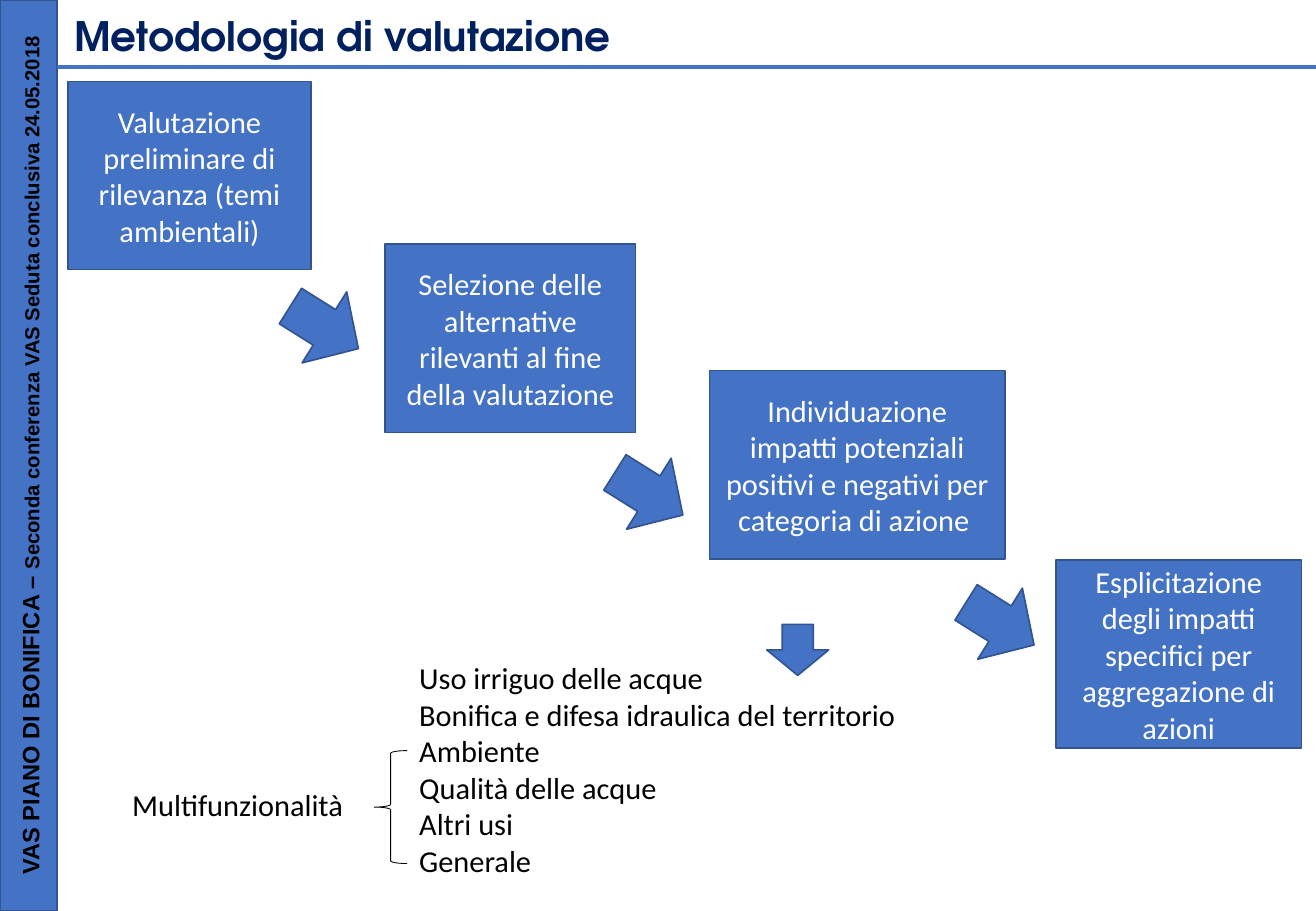
from dataclasses import dataclass

from lxml import etree
from pptx import Presentation
from pptx.dml.color import RGBColor
from pptx.enum.shapes import MSO_CONNECTOR, MSO_SHAPE
from pptx.enum.text import MSO_ANCHOR, MSO_AUTO_SIZE, PP_ALIGN
from pptx.oxml.ns import qn
from pptx.util import Inches, Pt

TITLE = "Metodologia di valutazione"
SIDEBAR = [("VAS PIANO DI BONIFICA – ", 14),
           ("Seconda conferenza VAS Seduta conclusiva 24.05.2018", 12)]
# text, left, top, width
STEPS = [
    ("Valutazione preliminare di rilevanza (temi ambientali)", 0.56, 0.67, 2),
    ("Selezione delle alternative rilevanti al fine della valutazione", 3.17, 2.01, 2.06),
    ("Individuazione impatti potenziali positivi e negativi per categoria di azione ",
     5.84, 3.05, 2.43),
    ("Esplicitazione degli impatti specifici per aggregazione di azioni", 8.69, 4.61, 2.02),
]
STEP_HEIGHT = 1.55
STEP_ARROWS = [(2.34, 2.35), (5.01, 3.72), (7.9, 4.79)]
CATEGORIES = [
    "Uso irriguo delle acque",
    "Bonifica e difesa idraulica del territorio",
    "Ambiente",
    "Qualità delle acque",
    "Altri usi",
    "Generale",
]
GROUP_LABEL = "Multifunzionalità"

WIDTH, HEIGHT = 10.83, 7.5
SIDEBAR_WIDTH = 0.47
RULE_TOP = 0.55


@dataclass(frozen=True)
class Theme:
    blue = RGBColor(0x44, 0x72, 0xC4)
    outline = RGBColor(0x32, 0x54, 0x91)
    navy = RGBColor(0x00, 0x20, 0x60)
    black = RGBColor(0, 0, 0)
    white = RGBColor(255, 255, 255)
    title_font, body_font, sidebar_font = "TeX Gyre Adventor", "Calibri", "Arial"
    title_size, body_size = 24, 18


THEME = Theme()


def inches(*lengths):
    return [Inches(length) for length in lengths]


def style(paragraph, font_name, color, size=None, bold=False, align=PP_ALIGN.LEFT):
    paragraph.alignment = align
    font = paragraph.font
    font.name, font.bold = font_name, bold
    font.color.rgb = color
    if size:
        font.size = Pt(size)


def add_block(slide, kind, box, rotation=0):
    block = slide.shapes.add_shape(kind, *inches(*box))
    block.shadow.inherit = False
    block.rotation = rotation
    block.fill.solid()
    block.fill.fore_color.rgb = THEME.blue
    block.line.color.rgb = THEME.outline
    block.line.width = Pt(1)
    return block


def place(placeholder, box):
    placeholder.left, placeholder.top, placeholder.width, placeholder.height = inches(*box)
    frame = placeholder.text_frame
    frame.auto_size = MSO_AUTO_SIZE.NONE
    frame.vertical_anchor = MSO_ANCHOR.TOP
    frame.word_wrap = True
    return frame


def add_text(slide, box):
    textbox = slide.shapes.add_textbox(*inches(*box))
    textbox.text_frame.word_wrap = True
    return textbox


def remove_bullet(paragraph):
    properties = paragraph._p.get_or_add_pPr()
    properties.set("marL", "0")
    properties.set("indent", "0")
    etree.SubElement(properties, qn("a:buNone"))


def add_frame(slide):
    """Draw the title, the rule below it and the vertical sidebar."""
    title = place(slide.shapes.title, (0.51, 0.04, 10.28, 0.5))
    title.text = TITLE
    style(title.paragraphs[0], THEME.title_font, THEME.navy, THEME.title_size, bold=True)

    add_block(slide, MSO_SHAPE.RECTANGLE, (0, 0, SIDEBAR_WIDTH, HEIGHT))
    rule = slide.shapes.add_connector(
        MSO_CONNECTOR.STRAIGHT, *inches(SIDEBAR_WIDTH, RULE_TOP, WIDTH, RULE_TOP))
    rule.line.color.rgb = THEME.blue
    rule.line.width = Pt(2.25)
    etree.SubElement(rule._element.spPr, qn("a:effectLst"))

    sidebar = add_text(slide, (-3.5, 3.58, HEIGHT, 0.34))
    sidebar.rotation = 270
    heading = sidebar.text_frame.paragraphs[0]
    style(heading, THEME.sidebar_font, THEME.black, bold=True, align=PP_ALIGN.CENTER)
    for text, size in SIDEBAR:
        run = heading.add_run()
        run.text = text
        run.font.size = Pt(size)


def add_steps(slide):
    for text, left, top, width in STEPS:
        step = add_block(slide, MSO_SHAPE.RECTANGLE, (left, top, width, STEP_HEIGHT))
        frame = step.text_frame
        frame.word_wrap = True
        frame.vertical_anchor = MSO_ANCHOR.MIDDLE
        frame.text = text
        style(frame.paragraphs[0], THEME.body_font, THEME.white, THEME.body_size,
              align=PP_ALIGN.CENTER)
    for left, top in STEP_ARROWS:
        add_block(slide, MSO_SHAPE.RIGHT_ARROW, (left, top, 0.66, 0.69), rotation=32.1)


def add_categories(slide):
    categories = place(slide.placeholders[1], (3.35, 5.38, 5.34, 1.92))
    categories.text = "\n".join(CATEGORIES)
    for category in categories.paragraphs:
        remove_bullet(category)
        category.space_before = Pt(0)
        style(category, THEME.body_font, THEME.black, THEME.body_size)

    add_block(slide, MSO_SHAPE.DOWN_ARROW, (6.31, 5.14, 0.51, 0.42))
    brace = add_block(slide, MSO_SHAPE.LEFT_BRACE, (3.08, 6.18, 0.27, 0.93))
    brace.fill.background()
    brace.line.color.rgb = THEME.black
    brace.line.width = Pt(0.5)

    label = add_text(slide, (0.99, 6.42, 2, 0.4)).text_frame
    label.text = GROUP_LABEL
    style(label.paragraphs[0], THEME.body_font, THEME.black, THEME.body_size)


def main():
    deck = Presentation()
    deck.slide_width, deck.slide_height = inches(WIDTH, HEIGHT)
    slide = deck.slides.add_slide(deck.slide_layouts[1])
    add_frame(slide)
    add_steps(slide)
    add_categories(slide)
    deck.save("out.pptx")


if __name__ == "__main__":
    main()
